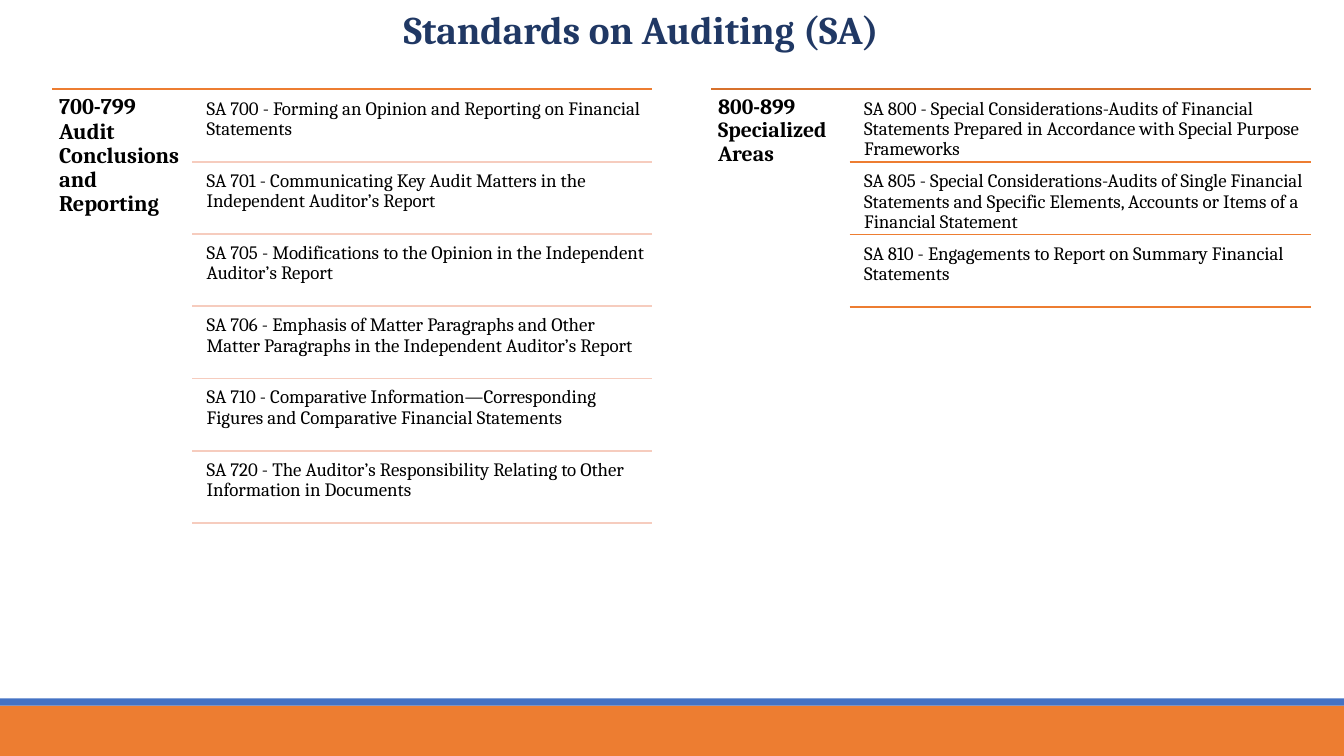
import pptx
import pptx.dml.color
import pptx.enum.shapes
import pptx.enum.text
import pptx.util
import lxml.etree

Cm = pptx.util.Cm
RGBColor = pptx.dml.color.RGBColor

ORANGE = RGBColor(0xED, 0x7D, 0x31)
DARK_ORANGE = RGBColor(0xD7, 0x71, 0x2C)
PALE_PINK = RGBColor(0xF6, 0xCC, 0xBE)
BLUE = RGBColor(0x44, 0x72, 0xC4)
NAVY = RGBColor(0x20, 0x38, 0x64)
BLACK = RGBColor(0, 0, 0)

TITLE = "Standards on Auditing (SA)"
SERIES = [
    {
        "heading": "800-899 Specialized Areas",
        "heading_size": 15.5,
        "left": 17.93,
        "heading_width": 3.48,
        "row_pitch": 1.83,
        "top_color": DARK_ORANGE,
        "rule_color": ORANGE,
        "standards": [
            "SA 800 - Special Considerations-Audits of Financial Statements Prepared in Accordance with Special Purpose Frameworks",
            "SA 805 - Special Considerations-Audits of Single Financial Statements and Specific Elements, Accounts or Items of a Financial Statement",
            "SA 810 - Engagements to Report on Summary Financial Statements",
        ],
    },
    {
        "heading": "700-799 Audit Conclusions and Reporting",
        "heading_size": 16,
        "left": 1.32,
        "heading_width": 3.52,
        "row_pitch": 1.82,
        "top_color": ORANGE,
        "rule_color": PALE_PINK,
        "standards": [
            "SA 700 - Forming an Opinion and Reporting on Financial Statements",
            "SA 701 - Communicating Key Audit Matters in the Independent Auditor’s Report",
            "SA 705 - Modifications to the Opinion in the Independent Auditor’s Report",
            "SA 706 - Emphasis of Matter Paragraphs and Other Matter Paragraphs in the Independent Auditor’s Report",
            "SA 710 - Comparative Information—Corresponding Figures and Comparative Financial Statements",
            "SA 720 - The Auditor’s Responsibility Relating to Other Information in Documents",
        ],
    },
]
FOOTER_BARS = [(17.78, 1.27, ORANGE), (17.6, 0.18, BLUE)]

SLIDE_WIDTH, SLIDE_HEIGHT = 33.87, 19.05
SERIES_TOP, SERIES_WIDTH = 2.24, 15.11
ROW_TOP, ROW_HEIGHT = 2.34, 1.74
TEXT_GAP, TEXT_WIDTH = 0.22, 11.38


def apply(target, values):
    for name, value in values.items():
        setattr(target, name, value)


def add_text(shapes, text, box, size, color=BLACK, bold=False, inset=(0.25, 0.13), spacing=1.0):
    shape = shapes.add_textbox(*map(Cm, box))
    frame = shape.text_frame
    horizontal, vertical = map(Cm, inset)
    apply(frame, {
        "word_wrap": True,
        "vertical_anchor": pptx.enum.text.MSO_ANCHOR.TOP,
        "margin_left": horizontal, "margin_right": horizontal,
        "margin_top": vertical, "margin_bottom": vertical,
    })
    paragraph = frame.paragraphs[0]
    paragraph.line_spacing = spacing
    run = paragraph.add_run()
    run.text = text
    apply(run.font, {"name": "Cambria", "size": pptx.util.Pt(size), "bold": bold})
    run.font.color.rgb = color


def add_rule(shapes, left, right, top, color):
    rule = shapes.add_connector(
        pptx.enum.shapes.MSO_CONNECTOR.STRAIGHT, Cm(left), Cm(top), Cm(right), Cm(top))
    rule.line.color.rgb = color
    rule.line.width = pptx.util.Pt(1.25)
    properties = rule.element.spPr
    lxml.etree.SubElement(properties, pptx.oxml.ns.qn("a:effectLst"))


def add_series(slide, series):
    shapes = slide.shapes.add_group_shape().shapes
    left, pitch = series["left"], series["row_pitch"]
    right = left + SERIES_WIDTH
    row_left = left + series["heading_width"]
    add_rule(shapes, left, right, SERIES_TOP, series["top_color"])
    add_text(shapes, series["heading"],
             (left, SERIES_TOP, series["heading_width"], pitch * len(series["standards"])),
             series["heading_size"], bold=True, inset=(0.17, 0.17), spacing=0.9)
    for index, standard in enumerate(series["standards"]):
        top = ROW_TOP + index * pitch
        add_text(shapes, standard, (row_left + TEXT_GAP, top, TEXT_WIDTH, ROW_HEIGHT),
                 13.5, inset=(0.15, 0.15), spacing=0.9)
        add_rule(shapes, row_left, right, top + ROW_HEIGHT, series["rule_color"])


def main():
    presentation = pptx.Presentation()
    apply(presentation, {"slide_width": Cm(SLIDE_WIDTH), "slide_height": Cm(SLIDE_HEIGHT)})
    slide = presentation.slides.add_slide(presentation.slide_layouts[6])
    for top, height, color in FOOTER_BARS:
        bar = slide.shapes.add_shape(
            pptx.enum.shapes.MSO_SHAPE.RECTANGLE, 0, Cm(top), Cm(SLIDE_WIDTH), Cm(height))
        bar.shadow.inherit = False
        bar.fill.solid()
        bar.fill.fore_color.rgb = color
        bar.line.fill.background()
    for series in SERIES:
        add_series(slide, series)
    add_text(slide.shapes, TITLE, (9.92, 0, 19.3, 1.45), 28, NAVY, bold=True)
    presentation.save("out.pptx")


if __name__ == "__main__":
    main()
